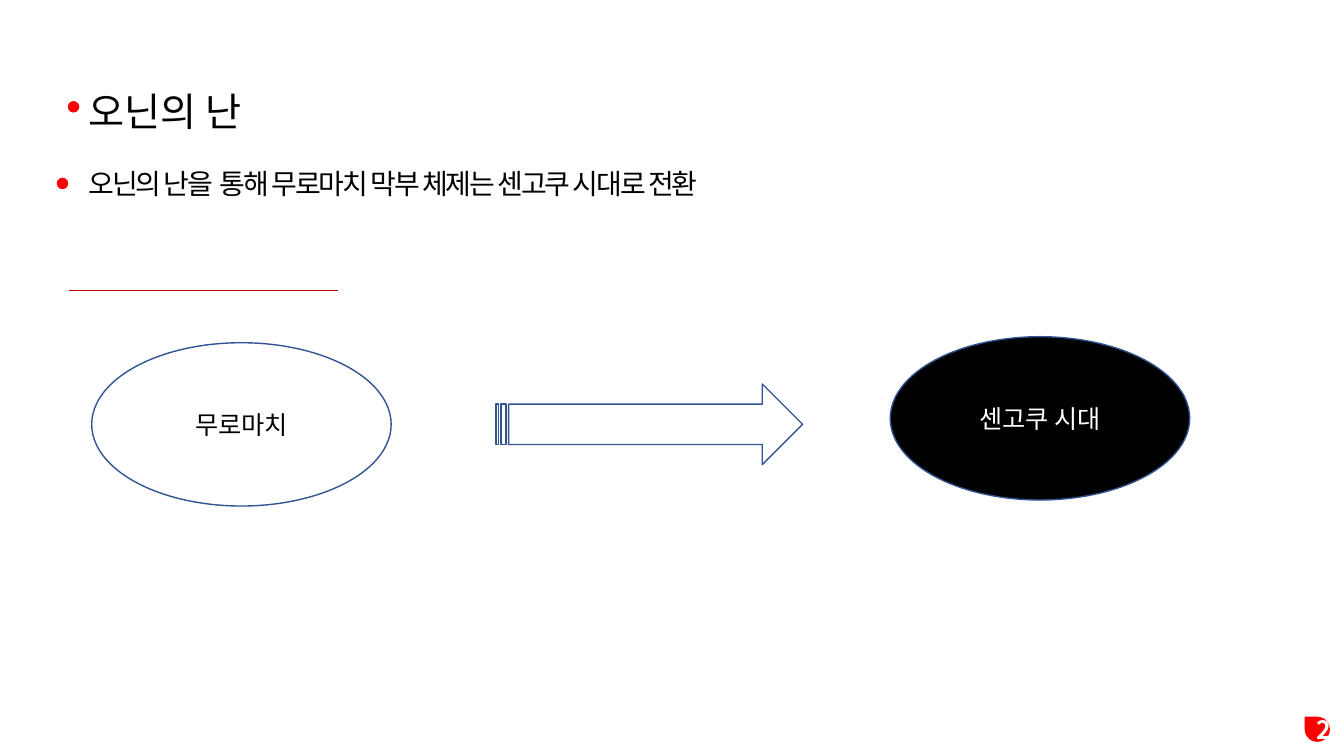
from lxml import etree
from pptx import Presentation
from pptx.dml.color import RGBColor
from pptx.enum.shapes import MSO_CONNECTOR, MSO_SHAPE
from pptx.enum.text import MSO_ANCHOR, PP_ALIGN
from pptx.oxml.ns import qn
from pptx.util import Inches, Pt

LINE = MSO_CONNECTOR.STRAIGHT
OVAL, ARROW, DROP = MSO_SHAPE.OVAL, MSO_SHAPE.STRIPED_RIGHT_ARROW, MSO_SHAPE.TEAR
MIDDLE = MSO_ANCHOR.MIDDLE
LEFT, CENTER = PP_ALIGN.LEFT, PP_ALIGN.CENTER

# Content
TITLE = "오닌의 난"
POINT = "오닌의 난을  통해 무로마치 막부 체제는 센고쿠 시대로 전환"
PAGE = "2"
# Eras: name, left, top, fill, text colour
ERAS = [
    ("무로마치", 0.91, 3.4, "white", "black"),
    ("센고쿠 시대", 8.83, 3.34, "black", "white"),
]


class Theme:
    font = "Noto Sans CJK KR"
    black, white, red = "000000", "FFFFFF", "FF0000"
    rule, edge = "C00000", "325491"
    title, point, label = 28, 20, 18


# Layout in inches
WIDE, HIGH = 13.33, 7.5
MARGIN, INDENT = 0.68, 0.78
DOT = 0.1
ERA_W, ERA_H = 2.97, 1.62
RULE_Y, RULE_W = 2.88, 2.67
BADGE = 0.25

deck = Presentation()
deck.slide_width, deck.slide_height = Inches(WIDE), Inches(HIGH)
slide = deck.slides.add_slide(deck.slide_layouts[6])


def rgb(code):
    return RGBColor.from_string(code)


def write(frame, text, size, color, align=CENTER, bold=False, track=None):
    frame.word_wrap = True
    frame.vertical_anchor = MIDDLE
    para = frame.paragraphs[0]
    para.alignment = align
    run = para.add_run()
    run.text = text
    font = run.font
    font.size, font.bold, font.name = Pt(size), bold, Theme.font
    font.color.rgb = rgb(color)
    props = run._r.get_or_add_rPr()
    etree.SubElement(props, qn("a:ea"), typeface=Theme.font)
    if track:
        props.set("spc", str(round(track * 100)))


def shape(kind, box, fill, line=None):
    item = slide.shapes.add_shape(kind, *map(Inches, box))
    item.shadow.inherit = False
    item.fill.solid()
    item.fill.fore_color.rgb = rgb(fill)
    if line:
        item.line.color.rgb = rgb(line)
        item.line.width = Pt(1)
    else:
        item.line.fill.background()
    return item


# Heading and point, each with a round marker
# Rows: text, dot left, dot top, box top, width, height, size, tracking
ROWS = [
    (TITLE, MARGIN, 1.01, 0.81, 2.05, 0.57, Theme.title, None),
    (POINT, 0.57, 1.77, 1.6, 7.12, 0.44, Theme.point, -1.5),
]
for text, dot_x, dot_y, top, width, height, size, track in ROWS:
    shape(OVAL, (dot_x, dot_y, DOT, DOT), Theme.red, Theme.red)
    box = slide.shapes.add_textbox(*map(Inches, (INDENT, top, width, height)))
    write(box.text_frame, text, size, Theme.black, align=LEFT, track=track)

# Rule under the text
ends = (MARGIN, RULE_Y, MARGIN + RULE_W, RULE_Y)
rule = slide.shapes.add_connector(LINE, *map(Inches, ends))
rule.line.color.rgb = rgb(Theme.rule)
rule.line.width = Pt(1)
etree.SubElement(rule._element.spPr, qn("a:effectLst"))

# Change of eras
for name, left, top, fill, ink in ERAS:
    era = shape(OVAL, (left, top, ERA_W, ERA_H), getattr(Theme, fill), Theme.edge)
    write(era.text_frame, name, Theme.label, getattr(Theme, ink))
shape(ARROW, (4.92, 3.81, 3.04, 0.8), Theme.white, Theme.edge)

# Page badge, turned with upright number
badge = shape(DROP, (WIDE - 0.39, HIGH - 0.39, BADGE, BADGE), Theme.red)
badge.rotation = 270
write(badge.text_frame, PAGE, Theme.label, Theme.white, bold=True)
badge.text_frame._txBody.bodyPr.set("vert", "eaVert")

deck.save("out.pptx")
